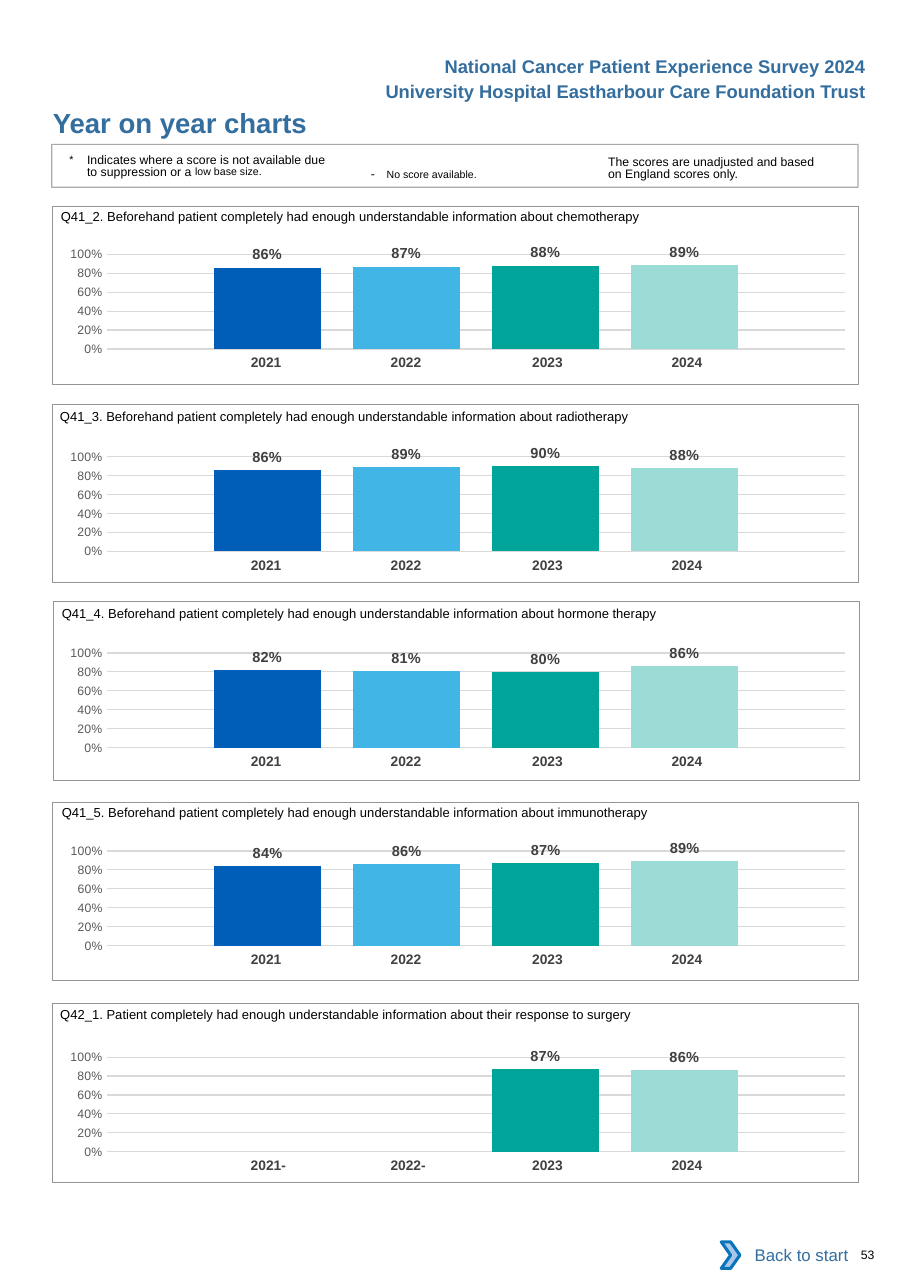
import pptx
import pptx.chart.data
import pptx.dml.color
import pptx.enum.chart
import pptx.enum.shapes
import pptx.enum.text
import pptx.oxml
import pptx.oxml.ns
import pptx.util

Pt = pptx.util.Pt
RGBColor = pptx.dml.color.RGBColor
Align = pptx.enum.text.PP_ALIGN
Anchor = pptx.enum.text.MSO_ANCHOR
Shape = pptx.enum.shapes.MSO_SHAPE
qn = pptx.oxml.ns.qn

BLACK = RGBColor(0x00, 0x00, 0x00)
WHITE = RGBColor(0xFF, 0xFF, 0xFF)
HEADING = RGBColor(0x33, 0x6E, 0x9F)
FRAME = RGBColor(0x93, 0x95, 0x98)
GRID = RGBColor(0xD9, 0xD9, 0xD9)
AXIS = RGBColor(0x59, 0x59, 0x59)
LABEL = RGBColor(0x40, 0x40, 0x40)
YEAR = RGBColor(0x41, 0x40, 0x42)
ARROW = RGBColor(0xA8, 0xC7, 0xE9)
ARROW_LINE = RGBColor(0x0A, 0x74, 0xBB)
SERIES = (
    RGBColor(0x00, 0x5E, 0xB8),
    RGBColor(0x41, 0xB6, 0xE6),
    RGBColor(0x00, 0xA4, 0x99),
    RGBColor(0x9C, 0xDC, 0xD7),
)

YEARS = ("2021", "2022", "2023", "2024")
YEAR_WIDTHS = (91.4, 91.4, 96.5, 91.4)
YEAR_MARGINS = ((7.2, 0), (7.2, 0), (7.2, 2.9), (7.2, 8.6))
PLOT = {"x": 0.079, "y": 0.145, "w": 0.915, "h": 0.666}
ASKED = "Beforehand patient completely had enough understandable information about "

PANELS = (
    (34.3, 134.6, 39.8, 129.6, 28.3, 152.8, "Q41_2. " + ASKED + "chemotherapy",
     (0.86, 0.87, 0.88, 0.89)),
    (34, 264.2, 39.2, 260.2, 28.3, 285, "Q41_3. " + ASKED + "radiotherapy",
     (0.86, 0.89, 0.9, 0.88)),
    (34.6, 393.1, 40.4, 388.9, 28.3, 413.3, "Q41_4. " + ASKED + "hormone therapy",
     (0.82, 0.81, 0.8, 0.86)),
    (34.3, 524.2, 40.4, 519, 28.5, 542.7, "Q41_5. " + ASKED + "immunotherapy",
     (0.84, 0.86, 0.87, 0.89)),
    (34.3, 655.9, 39.4, 651.5, 28.3, 677.4,
     "Q42_1. Patient completely had enough understandable information "
     "about their response to surgery",
     (None, None, 0.87, 0.86)),
)


def set_font(font, size, color=BLACK, bold=False):
    font.name = "Arial"
    font.size = Pt(size)
    font.bold = bold
    font.color.rgb = color


def write(p, text, size=8, color=BLACK, bold=False, align=Align.LEFT,
          spacing=None, hang=0, baseline=0):
    p.alignment = align
    if spacing:
        p.line_spacing = Pt(spacing)
    if hang:
        pPr = p._p.get_or_add_pPr()
        pPr.set("marL", str(Pt(hang)))
        pPr.set("indent", str(-Pt(hang)))
    r = p.add_run()
    r.text = text
    set_font(r.font, size, color, bold)
    if baseline:
        r.font._element.set("baseline", str(baseline * 1000))


class Page:
    def __init__(self, prs):
        self.slide = prs.slides.add_slide(prs.slide_layouts[5])
        self.shapes = self.slide.shapes

    def group(self):
        self.shapes = self.slide.shapes.add_group_shape().shapes

    def ungroup(self):
        self.shapes = self.slide.shapes

    def frame(self, sp, margins, anchor=Anchor.TOP):
        tf = sp.text_frame
        tf.word_wrap = True
        tf.auto_size = pptx.enum.text.MSO_AUTO_SIZE.NONE
        tf.vertical_anchor = anchor
        tf.margin_left, tf.margin_top, tf.margin_right, tf.margin_bottom = map(Pt, margins)
        return tf.paragraphs[0]

    def title(self, x, y, w, h, text):
        sp = self.slide.shapes.title
        sp.left, sp.top, sp.width, sp.height = map(Pt, (x, y, w, h))
        write(self.frame(sp, (0, 0, 0, 0)), text, size=18, color=HEADING, bold=True)

    def text(self, x, y, w, h, text, margins=(0, 0, 0, 0), **fmt):
        sp = self.shapes.add_textbox(*map(Pt, (x, y, w, h)))
        p = self.frame(sp, margins)
        write(p, text, **fmt)
        return p

    def shape(self, kind, x, y, w, h, fill=None, line=None, weight=0.5):
        sp = self.shapes.add_shape(kind, *map(Pt, (x, y, w, h)))
        sp.shadow.inherit = False
        if fill is None:
            sp.fill.background()
        else:
            sp.fill.solid()
            sp.fill.fore_color.rgb = fill
        if line is None:
            sp.line.fill.background()
        else:
            sp.line.color.rgb = line
            sp.line.width = Pt(weight)
        return sp

    def years(self, x, y, labels):
        gf = self.shapes.add_table(1, len(labels), Pt(x), Pt(y), Pt(sum(YEAR_WIDTHS)), Pt(19.4))
        tbl = gf.table
        tbl.first_row = tbl.horz_banding = False
        style = tbl._tbl.tblPr.find(qn("a:tableStyleId"))
        style.text = "{2D5ABB26-0587-4C30-8999-92F81FD0307C}"
        tbl.rows[0].height = Pt(19.4)
        for i, label in enumerate(labels):
            tbl.columns[i].width = Pt(YEAR_WIDTHS[i])
            cell = tbl.cell(0, i)
            cell.fill.background()
            left, right = YEAR_MARGINS[i]
            cell.margin_left = Pt(left + 2.9 * label.endswith("-"))
            cell.margin_right = Pt(right)
            write(cell.text_frame.paragraphs[0], label, size=9, color=YEAR,
                  bold=True, align=Align.CENTER)

    def chart(self, x, y, w, h, values):
        data = pptx.chart.data.CategoryChartData(number_format="0%")
        data.categories = ["1"]
        for i, value in enumerate(values, 1):
            data.add_series(f"Series {i}", [value])
        kind = pptx.enum.chart.XL_CHART_TYPE.COLUMN_CLUSTERED
        chart = self.shapes.add_chart(kind, *map(Pt, (x, y, w, h)), data).chart
        chart.has_title = chart.has_legend = False
        chart.font.name = "Calibri"
        chart.font.size = Pt(10)
        chart.font.color.rgb = BLACK
        chart.category_axis.visible = False
        axis = chart.value_axis
        axis.minimum_scale, axis.maximum_scale, axis.major_unit = 0, 1, 0.2
        axis.major_tick_mark = pptx.enum.chart.XL_TICK_MARK.NONE
        axis.format.line.fill.background()
        axis.major_gridlines.format.line.color.rgb = GRID
        axis.major_gridlines.format.line.width = Pt(0.75)
        axis.tick_labels.number_format = "0%"
        axis.tick_labels.number_format_is_linked = False
        set_font(axis.tick_labels.font, 8, AXIS)
        plot = chart.plots[0]
        plot.gap_width, plot.overlap, plot.vary_by_categories = 200, -30, False
        for series, color in zip(plot.series, SERIES):
            series.format.fill.solid()
            series.format.fill.fore_color.rgb = color
            labels = series.data_labels
            labels.show_value = True
            labels.number_format = "0%"
            labels.number_format_is_linked = False
            labels.position = pptx.enum.chart.XL_LABEL_POSITION.OUTSIDE_END
            set_font(labels.font, 9.5, LABEL, True)
        self.place_plot(chart)

    def place_plot(self, chart):
        area = chart._chartSpace.chart.plotArea
        for old in area.findall(qn("c:layout")):
            area.remove(old)
        modes = "".join(f'<c:{k}Mode val="edge"/>' for k in "xy")
        sizes = "".join(f'<c:{k} val="{v}"/>' for k, v in PLOT.items())
        area.insert(0, pptx.oxml.parse_xml(
            f'<c:layout {pptx.oxml.ns.nsdecls("c")}><c:manualLayout>'
            f'<c:layoutTarget val="inner"/>{modes}{sizes}</c:manualLayout></c:layout>'))


def main():
    prs = pptx.Presentation()
    prs.slide_width, prs.slide_height = Pt(594.72), Pt(841.68)
    page = Page(prs)

    page.title(34.5, 69.1, 324, 21.6, "Year on year charts")
    for y, text in ((32.8, "National Cancer Patient Experience Survey 2024"),
                    (49, "University Hospital Eastharbour Care Foundation Trust")):
        page.text(216, y, 357.1, 21.6, text, margins=(7.2, 3.6, 7.2, 3.6), size=12,
                  color=HEADING, bold=True, align=Align.RIGHT)

    page.group()
    page.text(397.4, 100, 142, 19.4, "The scores are unadjusted and based on England scores only.",
              margins=(0, 2.2, 0, 0), spacing=8.1)
    p = page.text(235.4, 101.2, 131.8, 17.3, "-\t", margins=(7.2, 3.6, 7.2, 3.6), hang=10.2)
    write(p, "No score available.", size=12, baseline=3)
    p = page.text(45.4, 99.4, 171, 19.4, "*\t", margins=(0, 2.2, 0, 0), size=12,
                  spacing=8.1, hang=11.5, baseline=3)
    write(p, "Indicates where a score is not available due to suppression or a ")
    write(p, "low base size.", size=12, baseline=7)
    sp = page.shape(Shape.RECTANGLE, 33.8, 94.3, 527, 28.1, line=FRAME, weight=0.75)
    color = sp.line._ln.find(".//" + qn("a:srgbClr"))
    color.append(pptx.oxml.parse_xml(f'<a:alpha {pptx.oxml.ns.nsdecls("a")} val="80000"/>'))
    page.ungroup()

    for box_x, box_y, text_x, text_y, chart_x, chart_y, question, values in PANELS:
        page.chart(chart_x, chart_y, 527, 92.9, values)
        page.years(124.6, chart_y + 75.8,
                   [year if value else year + "-" for year, value in zip(YEARS, values)])
        page.shape(Shape.RECTANGLE, box_x, box_y, 527, 116.6, line=FRAME)
        page.text(text_x, text_y, 515, 17.3, question, margins=(0, 6.5, 0, 0), size=8.5)

    page.group()
    sp = page.shape(Shape.RECTANGLE, 476.6, 805, 85, 30.2, fill=WHITE)
    write(page.frame(sp, (7.2, 3.6, 7.2, 3.6), Anchor.MIDDLE), "Back to start", size=11,
          color=HEADING, align=Align.RIGHT)
    page.shape(Shape.CHEVRON, 471.4, 811.6, 12.2, 17.3, fill=ARROW, line=ARROW_LINE, weight=2)
    page.ungroup()
    page.text(562.6, 815.2, 30, 9.4, "53")

    prs.save("out.pptx")


if __name__ == "__main__":
    main()
